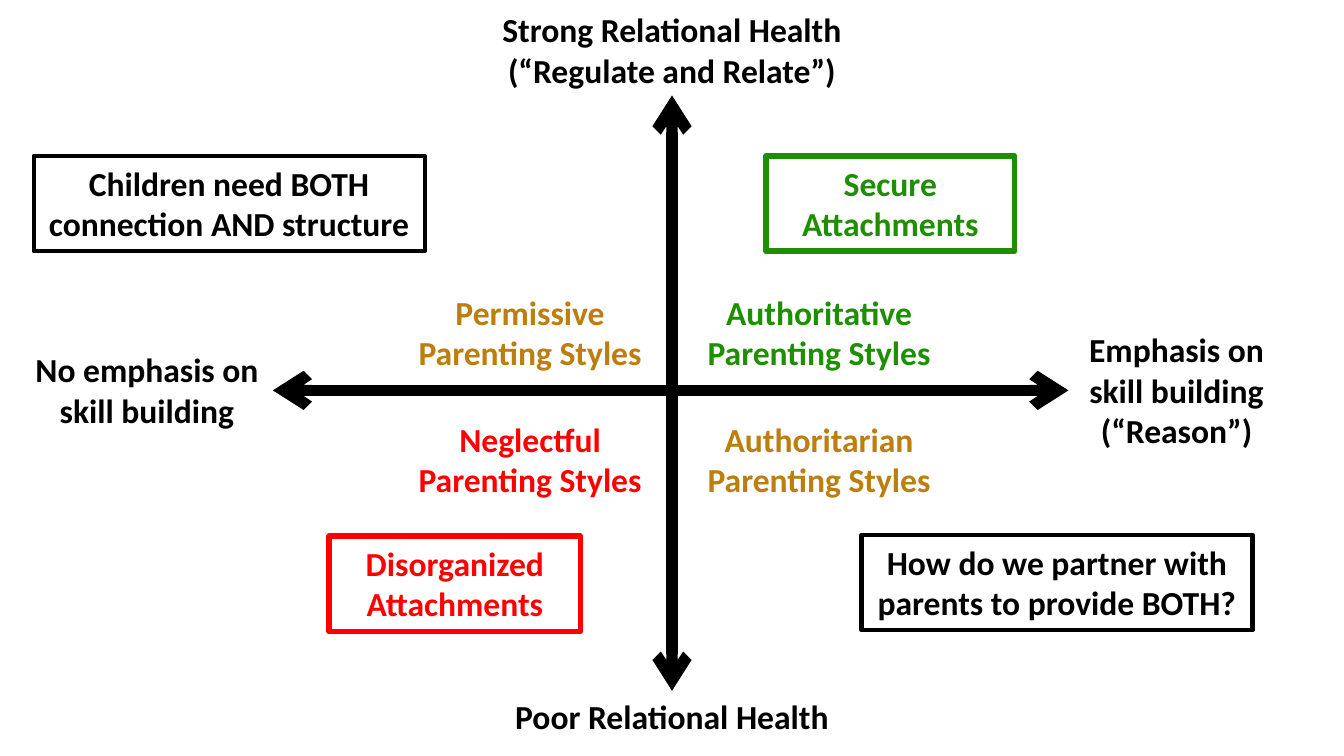
from lxml import etree
from pptx import Presentation
from pptx.dml.color import RGBColor
from pptx.enum.shapes import MSO_CONNECTOR, MSO_SHAPE
from pptx.enum.text import MSO_ANCHOR, MSO_AUTO_SIZE, PP_ALIGN
from pptx.oxml.ns import qn
from pptx.util import Emu, Inches, Pt

STRAIGHT, RECT = MSO_CONNECTOR.STRAIGHT, MSO_SHAPE.RECTANGLE
CENTER, TOP, GROW = PP_ALIGN.CENTER, MSO_ANCHOR.TOP, MSO_AUTO_SIZE.SHAPE_TO_FIT_TEXT
COLORS = {"black": "000000", "green": "1D8F00", "gold": "BC7E0E", "red": "FF0000"}
FONT, SIZE = "Calibri", 18
UNIT = Inches(0.1)
COLS, ROWS = 100, 56.25
LABEL_W, LABEL_H = 18.7, 7.1


def grid(n):
    """Turn a number of grid columns or rows into a length."""
    return Emu(round(n * UNIT))


def rgb(name):
    """Look up a named colour."""
    return RGBColor.from_string(COLORS[name])


def write(sp, lines, color):
    """Fill a shape with centred bold lines, one paragraph each."""
    tf = sp.text_frame
    tf.word_wrap = True
    tf.auto_size = GROW
    tf.vertical_anchor = TOP
    for i, line in enumerate(lines):
        p = tf.paragraphs[0] if i == 0 else tf.add_paragraph()
        p.alignment = CENTER
        r = p.add_run()
        r.text = line
        r.font.name, r.font.size, r.font.bold = FONT, Pt(SIZE), True
        r.font.color.rgb = rgb(color)


def label(s, box, lines, color="black"):
    """Place a plain label in a box."""
    write(s.shapes.add_textbox(*map(grid, box)), lines, color)


def callout(s, box, lines, color="black", weight=2.25):
    """Place an outlined label in a box."""
    sp = s.shapes.add_shape(RECT, *map(grid, box))
    sp.shadow.inherit = False
    sp.fill.background()
    sp.line.color.rgb = rgb(color)
    sp.line.width = Pt(weight)
    write(sp, lines, color)


def axis(s, x1, y1, x2, y2):
    """Draw a thick line with an arrowhead at both ends."""
    c = s.shapes.add_connector(STRAIGHT, *map(grid, (x1, y1, x2, y2)))
    c.line.color.rgb = rgb("black")
    c.line.width = Pt(6)
    ln = c.line._get_or_add_ln()
    for end in ("a:headEnd", "a:tailEnd"):
        etree.SubElement(ln, qn(end)).set("type", "arrow")
    etree.SubElement(c._element.spPr, qn("a:effectLst"))


def axes(s, box):
    """Cross two axes inside a box and name their four ends."""
    x, y, w, h = box
    mid_x, mid_y = COLS / 2, y + h / 2 - 0.2
    axis(s, mid_x, y, mid_x, y + h)
    axis(s, x, mid_y, x + w, mid_y)
    wide = 31.5
    left = mid_x - wide / 2
    label(s, (left, y - LABEL_H + 0.2, wide, LABEL_H),
          ["Strong Relational Health", "(“Regulate and Relate”)"])
    label(s, (left, y + h - 0.1, wide, 4), ["Poor Relational Health"])
    label(s, (x - LABEL_W, mid_y - LABEL_H / 2, LABEL_W, LABEL_H),
          ["No emphasis on skill building"])
    label(s, (x + w + 0.4, mid_y - 5.05, 15.3, 10.1),
          ["Emphasis on skill building", "(“Reason”)"])


def quadrants(s, box):
    """Put one parenting style in each corner of a box."""
    x, y, w, h = box
    styles = [("Permissive", "gold", 0, 0), ("Authoritative", "green", 1, 0),
              ("Neglectful", "red", 0, 1), ("Authoritarian", "gold", 1, 1)]
    for name, color, col, row in styles:
        spot = (x + col * (w - LABEL_W), y + row * (h - LABEL_H), LABEL_W, LABEL_H)
        label(s, spot, [name, "Parenting Styles"], color)


def callouts(s, box):
    """Set the outlined messages along the top and bottom of a box."""
    x, y, w, h = box
    wide, low = 29.1, y + h - LABEL_H
    callout(s, (x + 54.5, y, 18.5, LABEL_H), ["Secure", "Attachments"], "green", 3)
    callout(s, (x + 22, low + 0.1, LABEL_W, LABEL_H),
            ["Disorganized", "Attachments"], "red", 3)
    callout(s, (x, y, wide, LABEL_H), ["Children need BOTH connection AND structure"])
    callout(s, (x + w - wide, low, wide, LABEL_H),
            ["How do we partner with parents to provide BOTH?"])


def main():
    """Build and save the slide."""
    prs = Presentation()
    prs.slide_width, prs.slide_height = grid(COLS), grid(ROWS)
    s = prs.slides.add_slide(prs.slide_layouts[6])
    axes(s, (20.3, 7.1, 59.2, 44.3))
    quadrants(s, (30.1, 21.2, 40.2, 16.55))
    callouts(s, (2.5, 11.6, 90.7, 35.3))
    prs.save("out.pptx")


if __name__ == "__main__":
    main()
